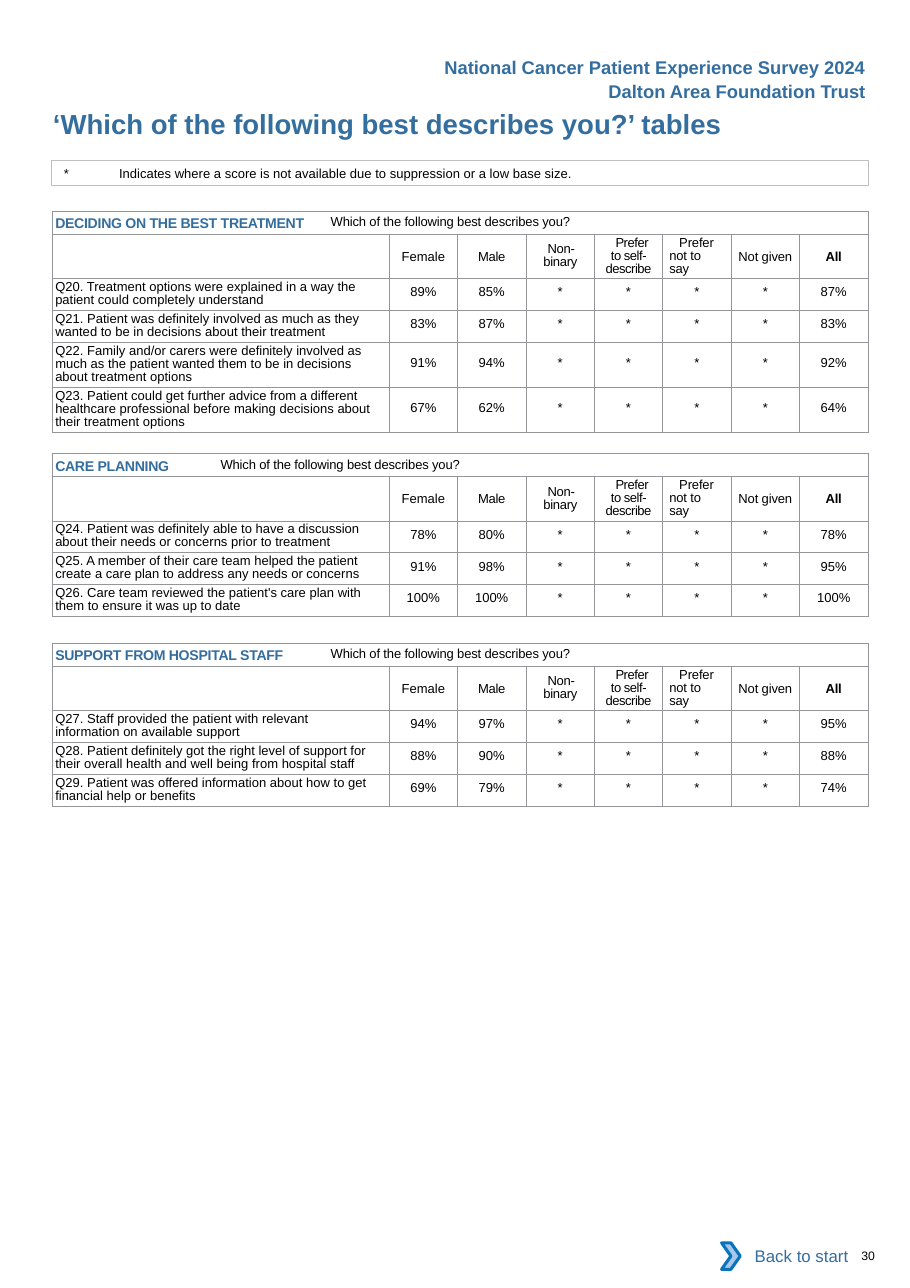
"""Build the survey page with score tables by how patients describe themselves."""
from dataclasses import dataclass

from lxml.etree import SubElement
from pptx import Presentation
from pptx.dml.color import RGBColor
from pptx.enum.shapes import MSO_SHAPE
from pptx.enum.text import MSO_ANCHOR, PP_ALIGN
from pptx.oxml.ns import qn
from pptx.util import Pt


@dataclass(frozen=True)
class Theme:
    font: str = "Arial"
    blue: RGBColor = RGBColor(0x33, 0x6E, 0x9F)
    black: RGBColor = RGBColor(0, 0, 0)
    white: RGBColor = RGBColor(255, 255, 255)
    note_line: RGBColor = RGBColor(0xBF, 0xBF, 0xBF)
    chevron_fill: RGBColor = RGBColor(0xA8, 0xC7, 0xE9)
    chevron_line: RGBColor = RGBColor(0x0A, 0x74, 0xBB)
    grid: str = "939598"
    title: float = 18
    heading: float = 12
    link: float = 11
    section: float = 15.8
    body: float = 8.5
    page: float = 8


theme = Theme()


def write(frame, text, size, color=theme.black, bold=False, align=PP_ALIGN.LEFT,
          margins=(0, 0, 0, 0), indents=(0, 0, 0), tab=None, line=None, spacing=0):
    """Fill a shape or cell with one styled paragraph and return that paragraph."""
    frame.margin_left, frame.margin_top, frame.margin_right, frame.margin_bottom = map(Pt, margins)
    text_frame = frame.text_frame if hasattr(frame, "text_frame") else frame
    paragraph = text_frame.paragraphs[0]
    paragraph.alignment = align
    paragraph.font.name, paragraph.font.size = theme.font, Pt(size)
    paragraph.font.bold, paragraph.font.color.rgb = bold, color
    if line:
        paragraph.line_spacing = Pt(line)
    properties = paragraph._p.get_or_add_pPr()
    for name, value in zip(("marL", "indent", "marR"), indents):
        properties.set(name, str(int(Pt(value))))
    if tab:
        tabs = SubElement(properties, qn("a:tabLst"))
        SubElement(tabs, qn("a:tab"), pos=str(int(Pt(tab))), algn="l")
        properties.insert(list(properties).index(properties.find(qn("a:defRPr"))), tabs)
    if text:
        run = paragraph.add_run()
        run.text = text
        run.font.name, run.font.size = theme.font, Pt(size)
        run.font.bold, run.font.color.rgb = bold, color
        if spacing:
            run._r.get_or_add_rPr().set("spc", str(round(spacing * 100)))
    return paragraph


presentation = Presentation()
presentation.slide_width, presentation.slide_height = Pt(594.72), Pt(841.68)
slide = presentation.slides.add_slide(presentation.slide_layouts[6])

LEFT = 33.9
HEADER_MARGINS = (7.2, 3.6, 7.2, 3.6)
text_boxes = [
    ("30", 555.8, 815.8, 36.7, 9.4, theme.page, theme.black, False, PP_ALIGN.LEFT, (7.2, 0, 0, 0)),
    ("‘Which of the following best describes you?’ tables", LEFT, 70, 450, 21.6,
     theme.title, theme.blue, True, PP_ALIGN.LEFT, (0.7, 0, 0, 0)),
    ("Dalton Area Foundation Trust", 388, 49, 185, 21.6,
     theme.heading, theme.blue, True, PP_ALIGN.RIGHT, HEADER_MARGINS),
    ("National Cancer Patient Experience Survey 2024", 282, 33, 291, 21.6,
     theme.heading, theme.blue, True, PP_ALIGN.RIGHT, HEADER_MARGINS),
]
for text, left, top, width, height, size, color, bold, align, margins in text_boxes:
    box = slide.shapes.add_textbox(Pt(left), Pt(top), Pt(width), Pt(height))
    box.text_frame.word_wrap = align == PP_ALIGN.LEFT
    write(box.text_frame, text, size, color, bold, align, margins)

TITLE_HEIGHT, HEADER_HEIGHT, TWO_LINES, THREE_LINES = 15.1, 28.8, 20.9, 29.4
QUESTION_WIDTH, SCORE_WIDTH = 220.4, 44.73
headers = [
    ("Female", PP_ALIGN.CENTER, (0, 0, 0), 0),
    ("Male", PP_ALIGN.CENTER, (0, 0, 0), -0.2),
    ("Non- binary", PP_ALIGN.CENTER, (10.5, 0.7, 10), -0.2),
    ("Prefer to self- describe", PP_ALIGN.CENTER, (6, 4.3, 6), -0.3),
    ("Prefer not to say", PP_ALIGN.LEFT, (4.3, 6.5, 10), -0.1),
    ("Not given", PP_ALIGN.CENTER, (0, 0, 0), -0.1),
    ("All", PP_ALIGN.CENTER, (0, 0, 0), -0.2),
]
sections = [
    ("DECIDING ON THE BEST TREATMENT", 138.2, [
        ("Q20. Treatment options were explained in a way the patient could completely understand",
         TWO_LINES, 6, "89%", "85%", "87%"),
        ("Q21. Patient was definitely involved as much as they wanted to be in decisions about their treatment",
         TWO_LINES, 6, "83%", "87%", "83%"),
        ("Q22. Family and/or carers were definitely involved as much as the patient wanted them to be in decisions "
         "about treatment options", THREE_LINES, 6, "91%", "94%", "92%"),
        ("Q23. Patient could get further advice from a different healthcare professional before making decisions "
         "about their treatment options", THREE_LINES, 6, "67%", "62%", "64%"),
    ]),
    ("CARE PLANNING", 296.5, [
        ("Q24. Patient was definitely able to have a discussion about their needs or concerns prior to treatment",
         TWO_LINES, 6, "78%", "80%", "78%"),
        ("Q25. A member of their care team helped the patient create a care plan to address any needs or concerns",
         TWO_LINES, 6, "91%", "98%", "95%"),
        ("Q26. Care team reviewed the patient's care plan with them to ensure it was up to date",
         TWO_LINES, 6, "100%", "100%", "100%"),
    ]),
    ("SUPPORT FROM HOSPITAL STAFF", 420.5, [
        ("Q27. Staff provided the patient with relevant information on available support",
         TWO_LINES, 30, "94%", "97%", "95%"),
        ("Q28. Patient definitely got the right level of support for their overall health and well being "
         "from hospital staff", TWO_LINES, 6, "88%", "90%", "88%"),
        ("Q29. Patient was offered information about how to get financial help or benefits",
         TWO_LINES, 6, "69%", "79%", "74%"),
    ]),
]
for section, top, questions in sections:
    heights = [TITLE_HEIGHT, HEADER_HEIGHT] + [question[1] for question in questions]
    widths = [QUESTION_WIDTH] + [SCORE_WIDTH] * len(headers)
    table = slide.shapes.add_table(len(heights), len(widths), Pt(LEFT), Pt(top),
                                   Pt(sum(widths)), Pt(sum(heights))).table
    table.first_row = table.horz_banding = False
    for column, width in zip(table.columns, widths):
        column.width = Pt(width)
    for row, height in zip(table.rows, heights):
        row.height = Pt(height)
    for cell in table.iter_cells():
        cell_properties = cell._tc.get_or_add_tcPr()
        for side in ("a:lnL", "a:lnR", "a:lnT", "a:lnB"):
            border = SubElement(cell_properties, qn(side), w=str(int(Pt(0.5))))
            SubElement(SubElement(border, qn("a:solidFill")), qn("a:srgbClr"), val=theme.grid)
        cell.fill.solid()
        cell.fill.fore_color.rgb = theme.white
        write(cell, "", theme.body)

    title_cell = table.cell(0, 0)
    title_cell.merge(table.cell(0, len(headers)))
    title_cell.vertical_anchor = MSO_ANCHOR.MIDDLE
    paragraph = write(title_cell, section + "\t", theme.section, theme.blue, True,
                      indents=(2.2, 0, 0), tab=305.3, line=11.8, spacing=-0.15)
    paragraph.runs[0]._r.get_or_add_rPr().set("baseline", "-8000")
    prompt = paragraph.add_run()
    prompt.text = "Which of the following best describes you?"
    prompt.font.name, prompt.font.size = theme.font, Pt(theme.body)
    prompt.font.bold, prompt.font.color.rgb = False, theme.black
    prompt._r.get_or_add_rPr().set("spc", "-10")

    for column, (label, align, indents, spacing) in enumerate(headers, 1):
        cell = table.cell(1, column)
        cell.vertical_anchor = MSO_ANCHOR.MIDDLE
        write(cell, label, theme.body, bold=label == "All", align=align,
              indents=indents, line=8.6 if any(indents) else None, spacing=spacing)

    for row, (question, height, right, female, male, overall) in enumerate(questions, 2):
        write(table.cell(row, 0), question, theme.body, margins=(0, 1.6, 0, 0),
              indents=(2.2, 0, right), line=8.6)
        score_top = 4.2 if height == TWO_LINES else 8.6
        for column, score in enumerate([female, male] + ["*"] * 4 + [overall], 1):
            write(table.cell(row, column), score, theme.body, align=PP_ALIGN.CENTER,
                  margins=(0, score_top, 0, 0))

note = slide.shapes.add_shape(MSO_SHAPE.RECTANGLE, Pt(LEFT), Pt(104.9), Pt(533.5), Pt(16.1))
note.shadow.inherit = False
note.fill.background()
note.line.color.rgb, note.line.width = theme.note_line, Pt(0.5)
note.text_frame.word_wrap = True
note.text_frame.vertical_anchor = MSO_ANCHOR.TOP
write(note.text_frame, "*\tIndicates where a score is not available due to suppression or a low base size.",
      theme.body, margins=(0, 3, 0, 3), indents=(7.9, 0, 0), tab=24.5)

back_link = slide.shapes.add_group_shape()
link = back_link.shapes.add_shape(MSO_SHAPE.RECTANGLE, Pt(476.6), Pt(805.7), Pt(85), Pt(30.2))
link.shadow.inherit = False
link.fill.solid()
link.fill.fore_color.rgb = theme.white
link.line.fill.background()
link.text_frame.vertical_anchor = MSO_ANCHOR.MIDDLE
write(link.text_frame, "Back to start", theme.link, theme.blue, align=PP_ALIGN.RIGHT, margins=HEADER_MARGINS)
chevron = back_link.shapes.add_shape(MSO_SHAPE.CHEVRON, Pt(471.6), Pt(812.2), Pt(12.2), Pt(17.3))
chevron.shadow.inherit = False
chevron.fill.solid()
chevron.fill.fore_color.rgb = theme.chevron_fill
chevron.line.color.rgb, chevron.line.width = theme.chevron_line, Pt(2)

presentation.save("out.pptx")
